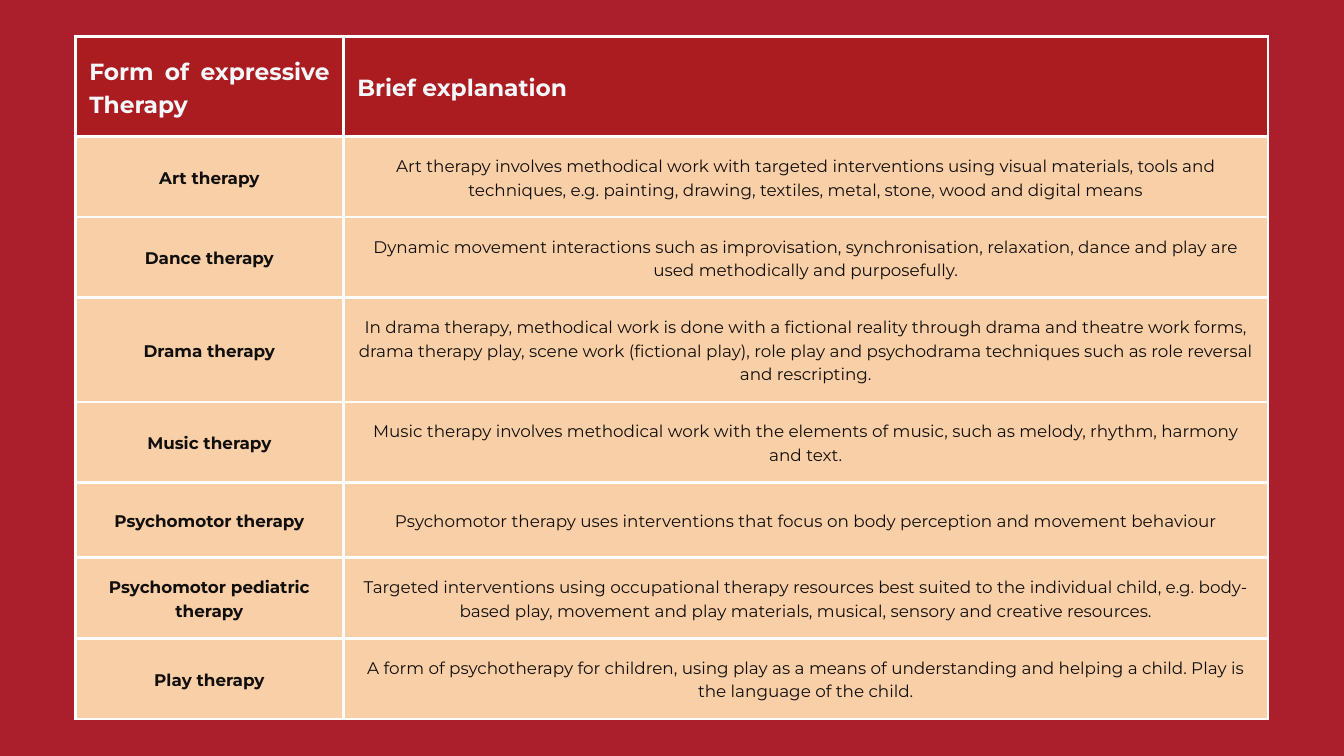
from dataclasses import dataclass

from lxml import etree
from pptx import Presentation
from pptx.dml.color import RGBColor
from pptx.enum.text import MSO_ANCHOR, PP_ALIGN
from pptx.oxml.ns import qn
from pptx.table import Table, _Cell
from pptx.util import Pt

MIDDLE = MSO_ANCHOR.MIDDLE
CENTER = PP_ALIGN.CENTER
JUSTIFY = PP_ALIGN.JUSTIFY

CRIMSON = RGBColor(0xAB, 0x1F, 0x2C)
HEADER_RED = RGBColor(0xAA, 0x1C, 0x20)
PEACH = RGBColor(0xF9, 0xCF, 0xA7)
OFF_WHITE = RGBColor(0xF5, 0xF8, 0xFA)
INK = RGBColor(0x10, 0x0F, 0x0D)
WHITE = RGBColor(0xFF, 0xFF, 0xFF)

FONT = "Montserrat"
LEFT, TOP = 80.64, 38.88
COLUMN_WIDTHS = (287.3, 990.7)
HEADER_HEIGHT = 107.3
CELL_MARGIN = Pt(15)
BORDER_WIDTH = Pt(3)
LINE_SPACING = 1.4


@dataclass(frozen=True)
class Therapy:
    name: str
    explanation: str
    height: float = 86.4


HEADINGS = ("Form of expressive Therapy", "Brief explanation")
THERAPIES = (
    Therapy("Art therapy",
            "Art therapy involves methodical work with targeted interventions using visual "
            "materials, tools and techniques, e.g. painting, drawing, textiles, metal, stone, "
            "wood and digital means"),
    Therapy("Dance therapy",
            "Dynamic movement interactions such as improvisation, synchronisation, relaxation, "
            "dance and play are used methodically and purposefully."),
    Therapy("Drama therapy",
            "In drama therapy, methodical work is done with a fictional reality through drama "
            "and theatre work forms, drama therapy play, scene work (fictional play), role play "
            "and psychodrama techniques such as role reversal and rescripting.",
            height=111.6),
    Therapy("Music therapy",
            "Music therapy involves methodical work with the elements of music, such as melody, "
            "rhythm, harmony and text."),
    Therapy("Psychomotor therapy",
            "Psychomotor therapy uses interventions that focus on body perception and movement "
            "behaviour",
            height=80.6),
    Therapy("Psychomotor pediatric therapy",
            "Targeted interventions using occupational therapy resources best suited to the "
            "individual child, e.g. body-based play, movement and play materials, musical, "
            "sensory and creative resources."),
    Therapy("Play therapy",
            "A form of psychotherapy for children, using play as a means of understanding and "
            "helping a child. Play is the language of the child."),
)


def add_borders(cell: _Cell) -> None:
    properties = cell._tc.get_or_add_tcPr()
    for side in ("a:lnL", "a:lnR", "a:lnT", "a:lnB"):
        border = etree.SubElement(properties, qn(side), w=str(BORDER_WIDTH))
        paint = etree.SubElement(border, qn("a:solidFill"))
        etree.SubElement(paint, qn("a:srgbClr"), val=str(WHITE))


def write(cell: _Cell, text: str, *, size: float = 18, bold: bool = False,
          color: RGBColor = INK, align: PP_ALIGN = CENTER) -> None:
    paragraph = cell.text_frame.paragraphs[0]
    paragraph.alignment = align
    paragraph.line_spacing = Pt(size * LINE_SPACING)
    run = paragraph.add_run()
    run.text = text
    run.font.name = FONT
    run.font.size = Pt(size)
    run.font.bold = bold
    run.font.color.rgb = color


def style_cell(cell: _Cell, background: RGBColor) -> None:
    cell.vertical_anchor = MIDDLE
    cell.margin_left = cell.margin_right = CELL_MARGIN
    cell.margin_top = cell.margin_bottom = CELL_MARGIN
    add_borders(cell)
    cell.fill.solid()
    cell.fill.fore_color.rgb = background


def fill_table(table: Table) -> None:
    table.horz_banding = False
    for column, width in zip(table.columns, COLUMN_WIDTHS):
        column.width = Pt(width)
    table.rows[0].height = Pt(HEADER_HEIGHT)
    for cell, heading in zip(table.rows[0].cells, HEADINGS):
        style_cell(cell, HEADER_RED)
        write(cell, heading, size=25, bold=True, color=OFF_WHITE, align=JUSTIFY)
    for index, therapy in enumerate(THERAPIES, start=1):
        table.rows[index].height = Pt(therapy.height)
        name_cell, explanation_cell = table.rows[index].cells
        style_cell(name_cell, PEACH)
        write(name_cell, therapy.name, bold=True)
        style_cell(explanation_cell, PEACH)
        write(explanation_cell, therapy.explanation)


def main() -> None:
    presentation = Presentation()
    presentation.slide_width = Pt(1440)
    presentation.slide_height = Pt(810)
    slide = presentation.slides.add_slide(presentation.slide_layouts[6])
    slide.background.fill.solid()
    slide.background.fill.fore_color.rgb = CRIMSON
    total_height = HEADER_HEIGHT + sum(therapy.height for therapy in THERAPIES)
    overview = slide.shapes.add_table(
        len(THERAPIES) + 1, len(HEADINGS), Pt(LEFT), Pt(TOP),
        Pt(sum(COLUMN_WIDTHS)), Pt(total_height))
    fill_table(overview.table)
    presentation.save("out.pptx")


if __name__ == "__main__":
    main()
